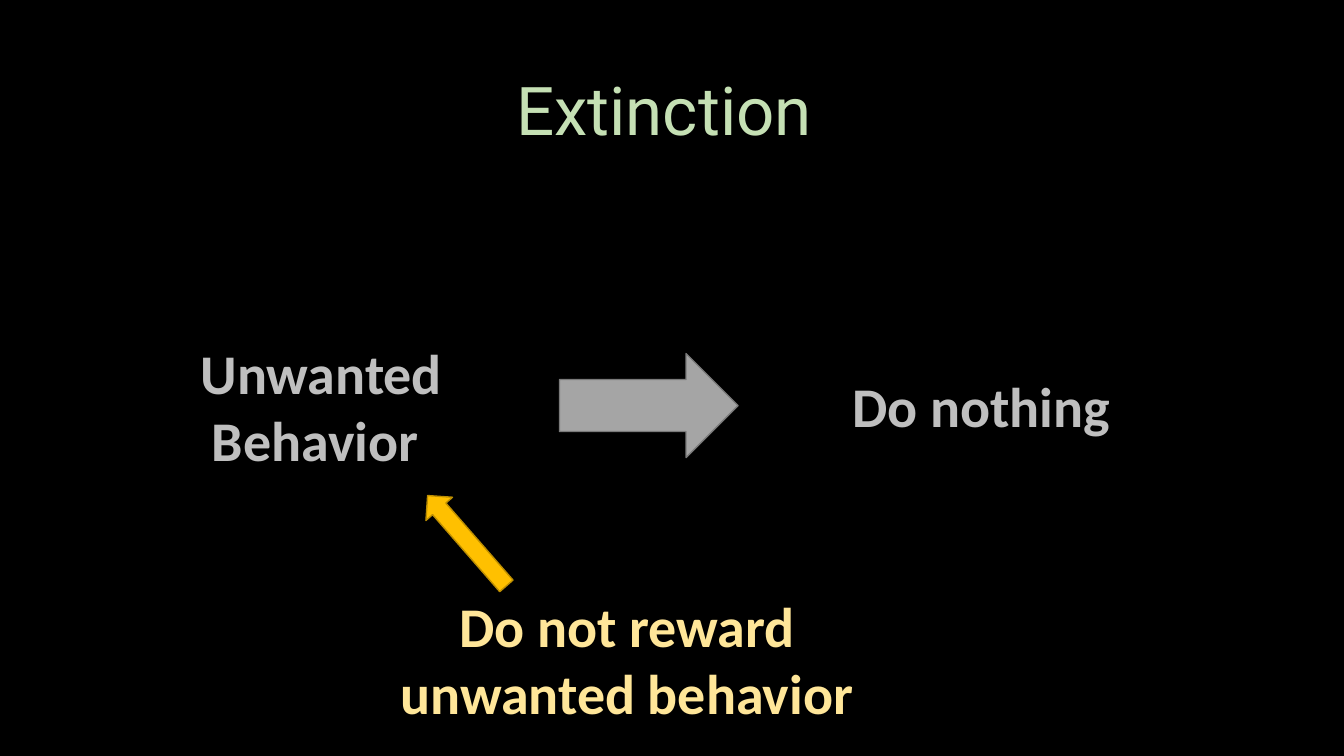
from lxml import etree
from pptx import Presentation
from pptx.dml.color import RGBColor
from pptx.enum.shapes import MSO_SHAPE as Shape
from pptx.enum.text import MSO_ANCHOR as Anchor, PP_ALIGN as Align
from pptx.oxml.ns import qn
from pptx.util import Cm, Pt

COLORS = {
    "black": "000000", "green": "C5E0B4", "silver": "BFBFBF",
    "gray": "A5A5A5", "gray_edge": "7A7A7A",
    "gold": "FFC000", "gold_edge": "BD8E00", "cream": "FFE699",
}


def color(name):
    """Return the named colour."""
    return RGBColor.from_string(COLORS[name])


def write(shape, text, *, font="Calibri", size=40, ink="silver", bold=True, spacing=1.0):
    """Put centred, formatted text into a shape."""
    frame = shape.text_frame
    frame.word_wrap = True
    frame.vertical_anchor = Anchor.MIDDLE
    para = frame.paragraphs[0]
    para.alignment = Align.CENTER
    para.line_spacing = spacing
    span = para.add_run()
    span.text = text
    span.font.name = font
    span.font.size = Pt(size)
    span.font.bold = bold
    span.font.color.rgb = color(ink)


def add_label(page, box, text, **style):
    """Add a text box."""
    label = page.shapes.add_textbox(*map(Cm, box))
    write(label, text, **style)


def add_arrow(page, box, fill, edge, rotation=0):
    """Add a block arrow."""
    arrow = page.shapes.add_shape(Shape.RIGHT_ARROW, *map(Cm, box))
    arrow.shadow.inherit = False
    arrow.rotation = rotation
    arrow.fill.solid()
    arrow.fill.fore_color.rgb = color(fill)
    arrow.line.color.rgb = color(edge)
    arrow.line.width = Pt(1)


def place_title(page, box, text):
    """Move, fill and write the title placeholder."""
    title = page.shapes.title
    title.left, title.top, title.width, title.height = map(Cm, box)
    title.fill.solid()
    title.fill.fore_color.rgb = color("black")
    tint = title.fill._xPr.find(qn("a:solidFill"))[0]
    etree.SubElement(tint, qn("a:alpha"), val="60000")
    write(title, text, font="Roboto", size=48, ink="green", bold=False, spacing=0.9)


def draw_flow(page, box, cause, response):
    """Draw the behavior, an arrow and the response on one middle line."""
    left, top, width, height = box
    middle = top + height / 2
    response_width, response_height, arrow_height = 11.25, 1.96, 2.62
    add_label(page, (left, top, 8.94, height), cause)
    add_label(page, (left + width - response_width, middle - response_height / 2,
                     response_width, response_height), response)
    add_arrow(page, (left + 10.47, middle - arrow_height / 2, 4.5, arrow_height),
              "gray", "gray_edge")


def draw_advice(page, box, text):
    """Draw the advice at the bottom with an arrow pointing up to the behavior."""
    left, top, width, height = box
    label_height = 3.68
    add_arrow(page, (left + 0.58, top, 3.02, 0.89), "gold", "gold_edge", rotation=228.9)
    add_label(page, (left, top + height - label_height, width, label_height),
              text, ink="cream")


def main():
    """Build and save the deck."""
    deck = Presentation()
    deck.slide_width, deck.slide_height = Cm(33.87), Cm(19.05)
    page = deck.slides.add_slide(deck.slide_layouts[5])
    page.background.fill.solid()
    page.background.fill.fore_color.rgb = color("black")
    place_title(page, (2.34, 1.02, 29.21, 3.68), "Extinction ")
    draw_flow(page, (3.63, 8.38, 26.72, 3.68), "Unwanted Behavior ", "Do nothing")
    draw_advice(page, (9.68, 13.18, 12.24, 5.26), "Do not reward unwanted behavior")
    deck.save("out.pptx")


if __name__ == "__main__":
    main()
